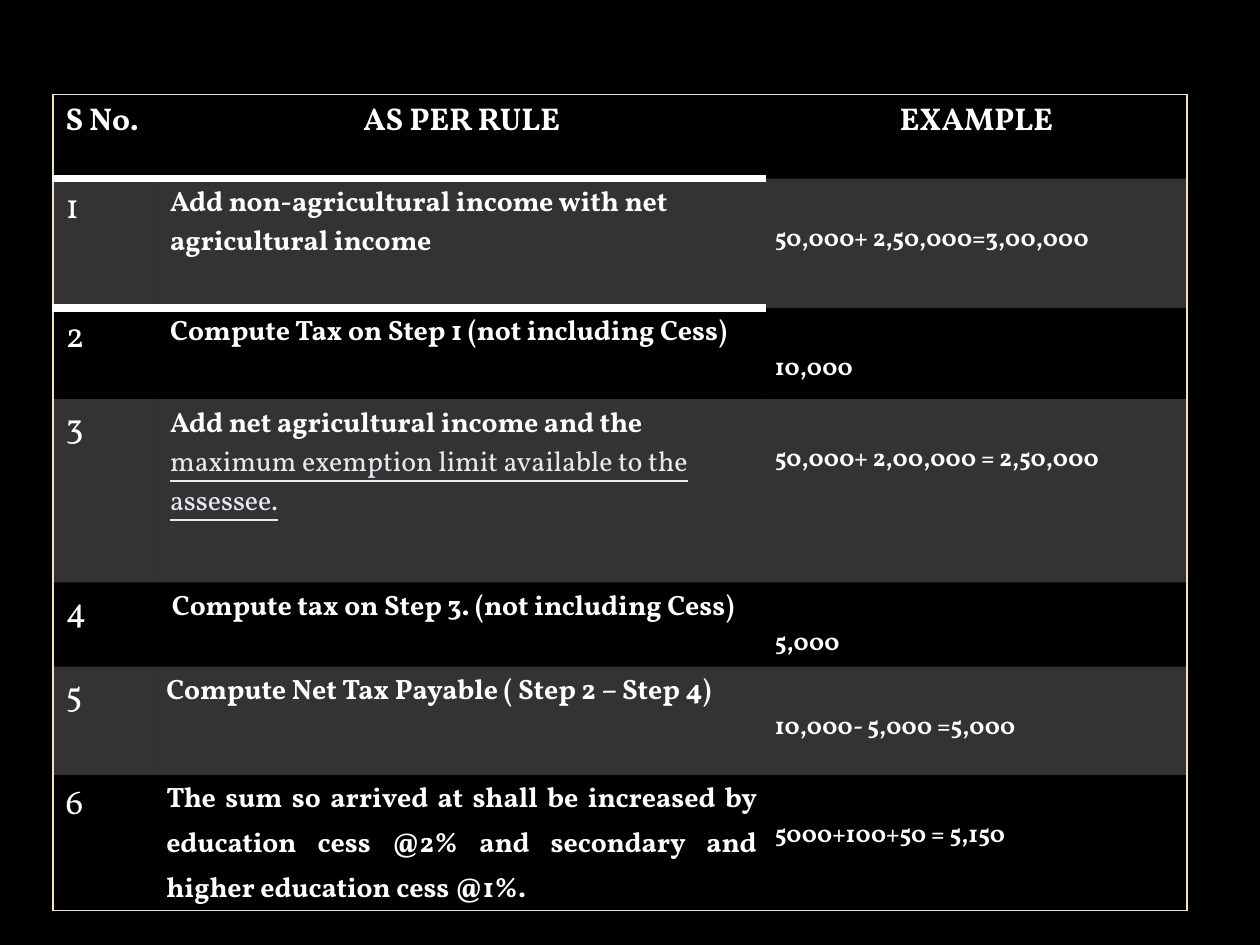
from dataclasses import dataclass

from lxml import etree
from pptx import Presentation
from pptx.dml.color import RGBColor
from pptx.enum.text import PP_ALIGN
from pptx.oxml.ns import qn
from pptx.util import Inches, Pt

LEFT, CENTER, JUSTIFY = PP_ALIGN.LEFT, PP_ALIGN.CENTER, PP_ALIGN.JUSTIFY
PLAIN_TABLE = "{2D5ABB26-0587-4C30-8999-92F81FD0307C}"
SLIDE_W, SLIDE_H = Inches(10), Inches(7.5)


@dataclass(frozen=True)
class Theme:
    font: str = "Vollkorn"
    back: str = "000000"
    text: str = "FFFFFF"
    link: str = "EBE7F2"
    frame: str = "F3E1BE"
    band: str = "FFFFFF"
    band_alpha: int = 20
    head_size: int = 18
    number_size: int = 20
    rule_size: int = 16
    example_size: int = 14
    frame_width: int = 1
    head_line_width: int = 5


@dataclass(frozen=True)
class Step:
    rule: str
    example: str
    height: float  # percent of the slide height
    linked: str = ""
    tight: bool = False  # justified rule text in a cell without top margin


@dataclass(frozen=True)
class Layout:
    """Text layout of a cell; margins are percent of the slide."""
    align: PP_ALIGN = LEFT
    spacing: float = 1.0
    side: float = 1.0
    top: float = 0.67
    bottom: float = 0.67


THEME = Theme()
NORMAL = Layout()
CENTERED = Layout(align=CENTER)
TIGHT = Layout(JUSTIFY, 1.15, 0.7, 0, 0)
LOWERED = Layout(JUSTIFY, 1.15, 0.7, 4.15, 0)

# Grid in percent of the slide
TABLE_LEFT, TABLE_TOP = 4.2, 10
COLUMNS = (8.3, 48.3, 33.4)
HEAD_HEIGHT = 8.9
HEADINGS = (("S No.", NORMAL), ("AS PER RULE", CENTERED), ("EXAMPLE", CENTERED))
STEPS = (
    Step("Add non-agricultural income with net agricultural income",
         "50,000+ 2,50,000=3,00,000", 13.7),
    Step("Compute Tax on Step 1 (not including Cess)", "10,000", 9.65),
    Step("Add net agricultural income and the ",
         "50,000+ 2,00,000 = 2,50,000", 19.4,
         linked="maximum exemption limit available to the assessee."),
    Step(" Compute tax on Step 3. (not including Cess)", "5,000", 8.9, tight=True),
    Step("Compute Net Tax Payable ( Step 2 – Step 4)",
         "10,000- 5,000 =5,000", 11.5, tight=True),
    Step("The sum so arrived at shall be increased by education cess @2% "
         "and secondary and higher education cess @1%.",
         "5000+100+50 = 5,150", 14.3, tight=True),
)


def across(percent: float) -> int:
    return int(SLIDE_W * percent / 100)


def down(percent: float) -> int:
    return int(SLIDE_H * percent / 100)


def style_run(r, size: int, bold: bool, color: str = THEME.text) -> None:
    r.font.name = THEME.font
    r.font.size = Pt(size)
    r.font.bold = bold
    r.font.color.rgb = RGBColor.from_string(color)


def write(cell, text: str, size: int, bold: bool, layout: Layout):
    cell.margin_left = cell.margin_right = across(layout.side)
    cell.margin_top, cell.margin_bottom = down(layout.top), down(layout.bottom)
    p = cell.text_frame.paragraphs[0]
    p.text = text
    p.alignment = layout.align
    p.line_spacing = layout.spacing
    style_run(p.runs[0], size, bold)
    return p


def add_border(cell, side: str, color: str, width: int) -> None:
    tc_pr = cell._tc.get_or_add_tcPr()
    ln = etree.SubElement(tc_pr, qn(f"a:ln{side}"), w=str(Pt(width)))
    fill = etree.SubElement(ln, qn("a:solidFill"))
    etree.SubElement(fill, qn("a:srgbClr"), val=color)


def add_frame(table) -> None:
    """Outline the table and underline the first two headings."""
    last_row, last_col = len(table.rows) - 1, len(table.columns) - 1
    for row in range(last_row + 1):
        for col in range(last_col + 1):
            edges = {"L": col == 0, "R": col == last_col,
                     "T": row == 0, "B": row == last_row}
            cell = table.cell(row, col)
            for side, outer in edges.items():
                if outer:
                    add_border(cell, side, THEME.frame, THEME.frame_width)
                elif col < last_col and (row, side) in ((0, "B"), (1, "T")):
                    add_border(cell, side, THEME.text, THEME.head_line_width)


def fill_cell(cell, banded: bool) -> None:
    if not banded:
        cell.fill.background()
        return
    cell.fill.solid()
    cell.fill.fore_color.rgb = RGBColor.from_string(THEME.band)
    color = cell._tc.tcPr.find(qn("a:solidFill")).find(qn("a:srgbClr"))
    etree.SubElement(color, qn("a:alpha"), val=str(THEME.band_alpha * 1000))


def write_step(table, row: int, step: Step) -> None:
    write(table.cell(row, 0), str(row), THEME.number_size, False, NORMAL)
    p = write(table.cell(row, 1), step.rule, THEME.rule_size, True,
              TIGHT if step.tight else NORMAL)
    if step.linked:
        r = p.add_run()
        r.text = step.linked
        style_run(r, THEME.rule_size, False, THEME.link)
        r.font.underline = True
    write(table.cell(row, 2), step.example, THEME.example_size, True, LOWERED)


def add_steps_table(slide) -> None:
    heights = [HEAD_HEIGHT] + [step.height for step in STEPS]
    frame = slide.shapes.add_table(
        len(heights), len(COLUMNS), across(TABLE_LEFT), down(TABLE_TOP),
        across(sum(COLUMNS)), down(sum(heights)))
    table = frame.table
    table.first_row = table.horz_banding = False
    table._tbl.tblPr.find(qn("a:tableStyleId")).text = PLAIN_TABLE
    for column, width in zip(table.columns, COLUMNS):
        column.width = across(width)
    for row, height in zip(table.rows, heights):
        row.height = down(height)

    # Borders come before fills in the cell properties
    add_frame(table)
    for row in range(len(heights)):
        for col in range(len(COLUMNS)):
            fill_cell(table.cell(row, col), banded=row % 2 == 1)

    # Headings and steps
    for col, (heading, layout) in enumerate(HEADINGS):
        write(table.cell(0, col), heading, THEME.head_size, True, layout)
    for row, step in enumerate(STEPS, start=1):
        write_step(table, row, step)


def main() -> None:
    prs = Presentation()
    prs.slide_width, prs.slide_height = SLIDE_W, SLIDE_H
    slide = prs.slides.add_slide(prs.slide_layouts[6])
    slide.background.fill.solid()
    slide.background.fill.fore_color.rgb = RGBColor.from_string(THEME.back)
    add_steps_table(slide)
    prs.save("out.pptx")


if __name__ == "__main__":
    main()
